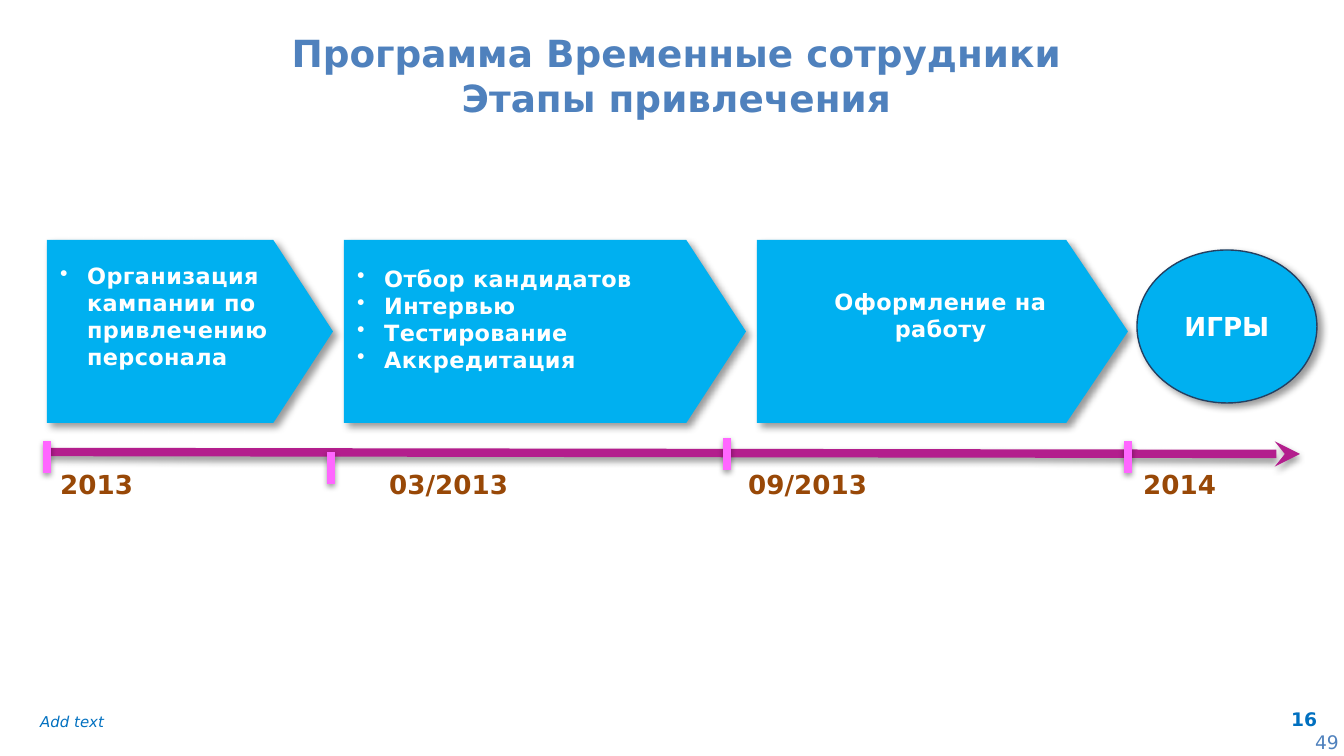
from lxml import etree
from pptx import Presentation
from pptx.dml.color import RGBColor
from pptx.enum.shapes import MSO_CONNECTOR, MSO_SHAPE
from pptx.enum.text import MSO_ANCHOR, MSO_AUTO_SIZE, PP_ALIGN
from pptx.oxml.ns import qn
from pptx.util import Emu, Pt

PX_PER_INCH = 134.4
FONT = "DejaVu Sans"
BLUE, TITLE_BLUE, FOOTER_BLUE = "00B0F0", "4F81BD", "0070C0"
WHITE, BROWN, NAVY = "FFFFFF", "984807", "254061"
PURPLE, PINK = "B31E8D", "FF66FF"
LEFT, CENTER, RIGHT = PP_ALIGN.LEFT, PP_ALIGN.CENTER, PP_ALIGN.RIGHT
TOP, MIDDLE, BOTTOM = MSO_ANCHOR.TOP, MSO_ANCHOR.MIDDLE, MSO_ANCHOR.BOTTOM
SHAPE_SHADOW = {"alpha": 40, "blur": 4, "distance": 3, "angle": 45}
LINE_SHADOW = {"alpha": 38, "blur": 3.1, "distance": 1.6, "angle": 90}
INDENT = 27
STAGE_TOP, STAGE_HEIGHT = 240, 183
TICK_HEIGHT = 32
DATE_TOP, DATE_HEIGHT = 462, 46

# left, width, point ratio, bottom inset, bulleted, lines
STAGES = [
    (757, 371, 0.337, 40, False, ["Оформление на работу"]),
    (47, 286, 0.326, 37, True, ["Организация кампании по привлечению персонала"]),
    (344, 402, 0.326, 32, True,
     ["Отбор кандидатов", "Интервью", "Тестирование", "Аккредитация"]),
]
DATES = [("2013", 47, 157), ("03/2013", 376, 180),
         ("09/2013", 735, 169), ("2014", 1130, 117)]
TICKS = [(47, 441), (1128, 441), (727, 438), (331, 452)]


def px(value):
    return Emu(round(value * 914400 / PX_PER_INCH))


def color(value):
    return RGBColor.from_string(value)


def apply(target, values):
    for name, value in values.items():
        setattr(target, name, value)


def format_text(paragraph, size, text_color, align=LEFT, **font_values):
    paragraph.alignment = align
    for run in paragraph.runs:
        apply(run.font, {"name": FONT, "size": Pt(size), **font_values})
        run.font.color.rgb = color(text_color)


def add_shadow(effects, alpha, blur, distance, angle):
    shadow = etree.SubElement(
        effects, qn("a:outerShdw"), blurRad=str(Pt(blur)), dist=str(Pt(distance)),
        dir=str(angle * 60000), algn="tl", rotWithShape="0")
    shade = etree.SubElement(shadow, qn("a:srgbClr"), val="000000")
    etree.SubElement(shade, qn("a:alpha"), val=str(alpha * 1000))


def add_label(slide, text, box, size, text_color, align=LEFT,
              frame_values=None, **font_values):
    frame = slide.shapes.add_textbox(*map(px, box)).text_frame
    apply(frame, {"word_wrap": True, **(frame_values or {})})
    frame.text = text
    format_text(frame.paragraphs[0], size, text_color, align, **font_values)


def add_filled_shape(slide, kind, box):
    shape = slide.shapes.add_shape(kind, *map(px, box))
    shape.fill.solid()
    shape.fill.fore_color.rgb = color(BLUE)
    shape.line.fill.background()
    shape.shadow.inherit = False
    add_shadow(shape._element.spPr.find(qn("a:effectLst")), **SHAPE_SHADOW)
    apply(shape.text_frame, {"word_wrap": True, "vertical_anchor": MIDDLE})
    return shape


def indent(paragraph, bulleted):
    properties = paragraph._p.get_or_add_pPr()
    properties.set("marL", str(px(INDENT)))
    properties.set("indent", str(px(-INDENT if bulleted else 0)))
    if bulleted:
        etree.SubElement(properties, qn("a:buChar"), char="•")


def add_stage(slide, left, width, point, bottom_inset, bulleted, lines):
    shape = add_filled_shape(slide, MSO_SHAPE.PENTAGON,
                             (left, STAGE_TOP, width, STAGE_HEIGHT))
    shape.adjustments[0] = point
    frame = shape.text_frame
    frame.margin_bottom = px(bottom_inset)
    frame.text = "\n".join(lines)
    for paragraph in frame.paragraphs:
        indent(paragraph, bulleted)
        format_text(paragraph, 12, WHITE, LEFT if bulleted else CENTER, bold=True)
        for run in paragraph.runs:
            run._r.get_or_add_rPr().set("spc", "20")


def add_goal(slide):
    shape = add_filled_shape(slide, MSO_SHAPE.OVAL, (1137, 250, 180, 153))
    shape.line.color.rgb = color(NAVY)
    shape.line.width = Pt(0.75)
    shape.text_frame.text = "ИГРЫ"
    format_text(shape.text_frame.paragraphs[0], 14, WHITE, CENTER, bold=True)


def add_line(slide, start, end, line_color, arrow=False):
    connector = slide.shapes.add_connector(
        MSO_CONNECTOR.STRAIGHT, *map(px, start + end))
    connector.line.color.rgb = color(line_color)
    connector.line.width = Pt(4.5)
    if arrow:
        etree.SubElement(connector.line._get_or_add_ln(), qn("a:headEnd"), type="stealth")
    effects = etree.SubElement(connector._element.spPr, qn("a:effectLst"))
    add_shadow(effects, **LINE_SHADOW)


def add_title(slide):
    title = slide.shapes.title
    apply(title, {"left": px(214), "top": px(56), "width": px(925), "height": px(79)})
    frame = title.text_frame
    frame.text = "Программа Временные сотрудники\vЭтапы привлечения"
    apply(frame, {"auto_size": MSO_AUTO_SIZE.NONE, "word_wrap": True,
                  "vertical_anchor": BOTTOM, "margin_bottom": px(15)})
    format_text(frame.paragraphs[0], 20, TITLE_BLUE, CENTER, bold=True)


def add_footer(slide):
    add_label(slide, "Add text", (27, 706, 1164, 32), 8, FOOTER_BLUE, italic=True)
    flush = {"margin_left": 0, "margin_right": 0, "margin_top": 0,
             "margin_bottom": 0, "vertical_anchor": BOTTOM}
    add_label(slide, "16", (1215, 711, 102, 19), 10, FOOTER_BLUE, RIGHT, flush, bold=True)
    add_label(slide, "49", (1302, 724, 51, 36), 10, TITLE_BLUE,
              frame_values={"word_wrap": False, "vertical_anchor": TOP})


def main():
    presentation = Presentation()
    presentation.slide_width, presentation.slide_height = px(1344), px(756)
    slide = presentation.slides.add_slide(presentation.slide_layouts[5])
    add_title(slide)
    add_footer(slide)
    for stage in STAGES:
        add_stage(slide, *stage)
    add_goal(slide)
    for text, left, width in DATES:
        add_label(slide, text, (left, DATE_TOP, width, DATE_HEIGHT), 14, BROWN, bold=True)
    add_line(slide, (1300, 454), (47, 452), PURPLE, arrow=True)
    for x, top in TICKS:
        add_line(slide, (x, top + TICK_HEIGHT), (x, top), PINK)
    presentation.save("out.pptx")


if __name__ == "__main__":
    main()
